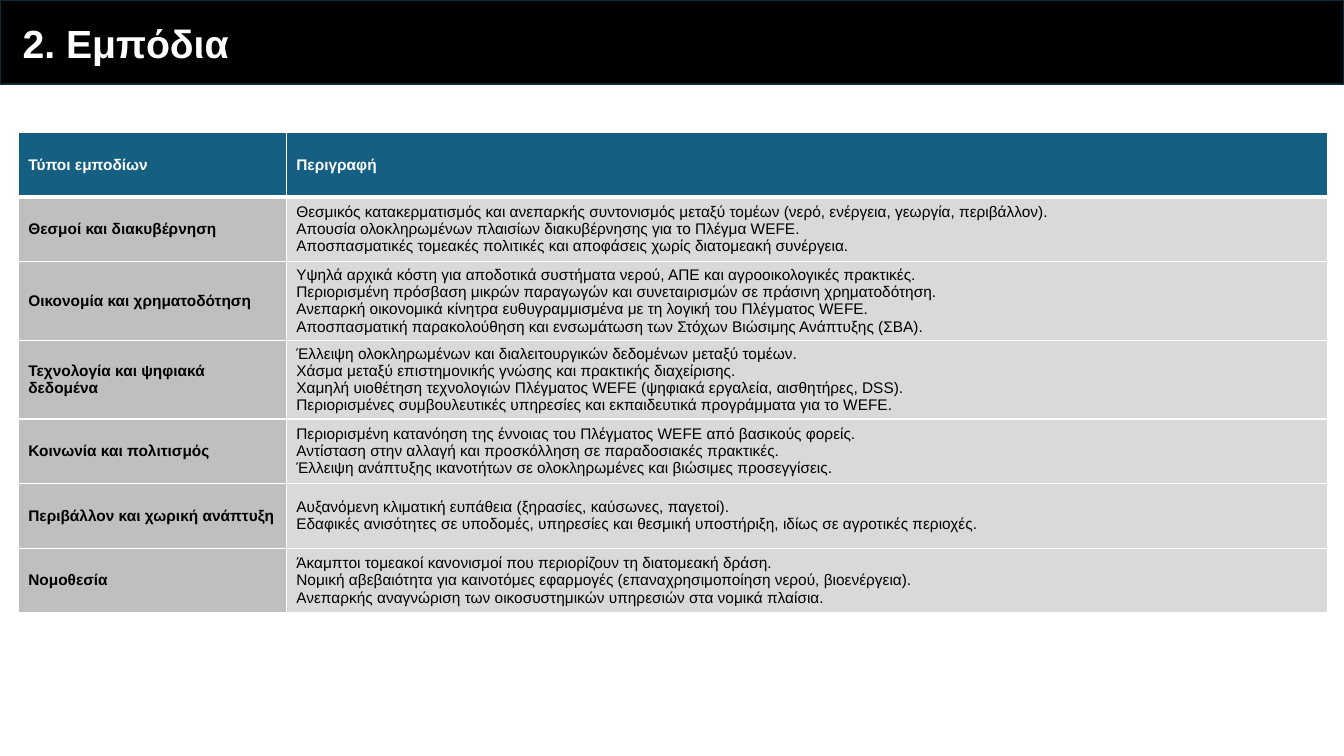
from copy import deepcopy
from dataclasses import dataclass

from lxml import etree
from pptx import Presentation
from pptx.dml.color import RGBColor
from pptx.enum.shapes import MSO_SHAPE
from pptx.enum.text import MSO_ANCHOR
from pptx.oxml.ns import qn
from pptx.slide import Slide
from pptx.table import _Cell
from pptx.text.text import TextFrame
from pptx.util import Pt

COLORS = {
    "white": "FFFFFF",
    "black": "000000",
    "banner_edge": "092A39",
    "header": "156082",
    "category": "BFBFBF",
    "description": "D9D9D9",
}
COLUMN_WIDTHS = (191.5, 743.5)
ROW_HEIGHT = 46.2


@dataclass(frozen=True)
class Obstacle:
    category: str
    details: tuple[str, ...]


OBSTACLES = (
    Obstacle("Θεσμοί και διακυβέρνηση", (
        "Θεσμικός κατακερματισμός και ανεπαρκής συντονισμός μεταξύ τομέων (νερό, ενέργεια, γεωργία, περιβάλλον).",
        "Απουσία ολοκληρωμένων πλαισίων διακυβέρνησης για το Πλέγμα WEFE.",
        "Αποσπασματικές τομεακές πολιτικές και αποφάσεις χωρίς διατομεακή συνέργεια.",
    )),
    Obstacle("Οικονομία και χρηματοδότηση", (
        "Υψηλά αρχικά κόστη για αποδοτικά συστήματα νερού, ΑΠΕ και αγροοικολογικές πρακτικές.",
        "Περιορισμένη πρόσβαση μικρών παραγωγών και συνεταιρισμών σε πράσινη χρηματοδότηση.",
        "Ανεπαρκή οικονομικά κίνητρα ευθυγραμμισμένα με τη λογική του Πλέγματος WEFE.",
        "Αποσπασματική παρακολούθηση και ενσωμάτωση των Στόχων Βιώσιμης Ανάπτυξης (ΣΒΑ).",
    )),
    Obstacle("Τεχνολογία και ψηφιακά δεδομένα", (
        "Έλλειψη ολοκληρωμένων και διαλειτουργικών δεδομένων μεταξύ τομέων.",
        "Χάσμα μεταξύ επιστημονικής γνώσης και πρακτικής διαχείρισης.",
        "Χαμηλή υιοθέτηση τεχνολογιών Πλέγματος WEFE (ψηφιακά εργαλεία, αισθητήρες, DSS).",
        "Περιορισμένες συμβουλευτικές υπηρεσίες και εκπαιδευτικά προγράμματα για το WEFE.",
    )),
    Obstacle("Κοινωνία και πολιτισμός", (
        "Περιορισμένη κατανόηση της έννοιας του Πλέγματος WEFE από βασικούς φορείς.",
        "Αντίσταση στην αλλαγή και προσκόλληση σε παραδοσιακές πρακτικές.",
        "Έλλειψη ανάπτυξης ικανοτήτων σε ολοκληρωμένες και βιώσιμες προσεγγίσεις.",
    )),
    Obstacle("Περιβάλλον και χωρική ανάπτυξη", (
        "Αυξανόμενη κλιματική ευπάθεια (ξηρασίες, καύσωνες, παγετοί).",
        "Εδαφικές ανισότητες σε υποδομές, υπηρεσίες και θεσμική υποστήριξη, ιδίως σε αγροτικές περιοχές.",
    )),
    Obstacle("Νομοθεσία", (
        "Άκαμπτοι τομεακοί κανονισμοί που περιορίζουν τη διατομεακή δράση.",
        "Νομική αβεβαιότητα για καινοτόμες εφαρμογές (επαναχρησιμοποίηση νερού, βιοενέργεια).",
        "Ανεπαρκής αναγνώριση των οικοσυστημικών υπηρεσιών στα νομικά πλαίσια.",
    )),
)


def rgb(name: str) -> RGBColor:
    return RGBColor.from_string(COLORS[name])


def write(frame: TextFrame, text: str, *, size: float = 11,
          color: str = "black", bold: bool = False) -> None:
    paragraph = frame.paragraphs[0]
    paragraph.text = text
    for run in paragraph.runs:
        run.font.name = "Arial"
        run.font.size = Pt(size)
        run.font.bold = bold
        run.font.color.rgb = rgb(color)
    for line_break in paragraph._p.findall(qn("a:br")):
        line_break.append(deepcopy(paragraph.runs[0]._r.rPr))


def add_borders(cell: _Cell, widths: dict[str, float]) -> None:
    properties = cell._tc.get_or_add_tcPr()
    for side, width in widths.items():
        border = etree.SubElement(properties, qn(f"a:ln{side}"), w=str(Pt(width)))
        fill = etree.SubElement(border, qn("a:solidFill"))
        etree.SubElement(fill, qn("a:srgbClr"), val=COLORS["white"])


def fill_cell(cell: _Cell, text: str, *, fill: str, row: int,
              color: str = "black", bold: bool = False) -> None:
    cell.vertical_anchor = MSO_ANCHOR.MIDDLE
    add_borders(cell, {"L": 1, "R": 1, "T": 3 if row == 1 else 1, "B": 3 if row == 0 else 1})
    cell.fill.solid()
    cell.fill.fore_color.rgb = rgb(fill)
    write(cell.text_frame, text, color=color, bold=bold)


def add_obstacle_table(slide: Slide) -> None:
    row_count = len(OBSTACLES) + 1
    table = slide.shapes.add_table(
        row_count, len(COLUMN_WIDTHS), Pt(13), Pt(94.5),
        Pt(sum(COLUMN_WIDTHS)), Pt(ROW_HEIGHT * row_count),
    ).table
    for column, width in zip(table.columns, COLUMN_WIDTHS):
        column.width = Pt(width)
    for table_row in table.rows:
        table_row.height = Pt(ROW_HEIGHT)
    for column, heading in enumerate(("Τύποι εμποδίων", "Περιγραφή")):
        fill_cell(table.cell(0, column), heading, fill="header", row=0, color="white", bold=True)
    for row, obstacle in enumerate(OBSTACLES, start=1):
        fill_cell(table.cell(row, 0), obstacle.category, fill="category", row=row, bold=True)
        fill_cell(table.cell(row, 1), "\n".join(obstacle.details), fill="description", row=row)


def add_banner(slide: Slide) -> None:
    banner = slide.shapes.add_shape(MSO_SHAPE.RECTANGLE, Pt(0), Pt(0), Pt(960), Pt(60))
    banner.shadow.inherit = False
    banner.fill.solid()
    banner.fill.fore_color.rgb = rgb("black")
    banner.line.color.rgb = rgb("banner_edge")
    banner.line.width = Pt(1.5)
    title = slide.shapes.add_textbox(Pt(9), Pt(10), Pt(722), Pt(50)).text_frame
    title.word_wrap = True
    write(title, "2. Εμπόδια", size=28, color="white", bold=True)


def main() -> None:
    presentation = Presentation()
    presentation.slide_width = Pt(960)
    presentation.slide_height = Pt(540)
    slide = presentation.slides.add_slide(presentation.slide_layouts[6])
    add_obstacle_table(slide)
    add_banner(slide)
    presentation.save("out.pptx")


if __name__ == "__main__":
    main()
